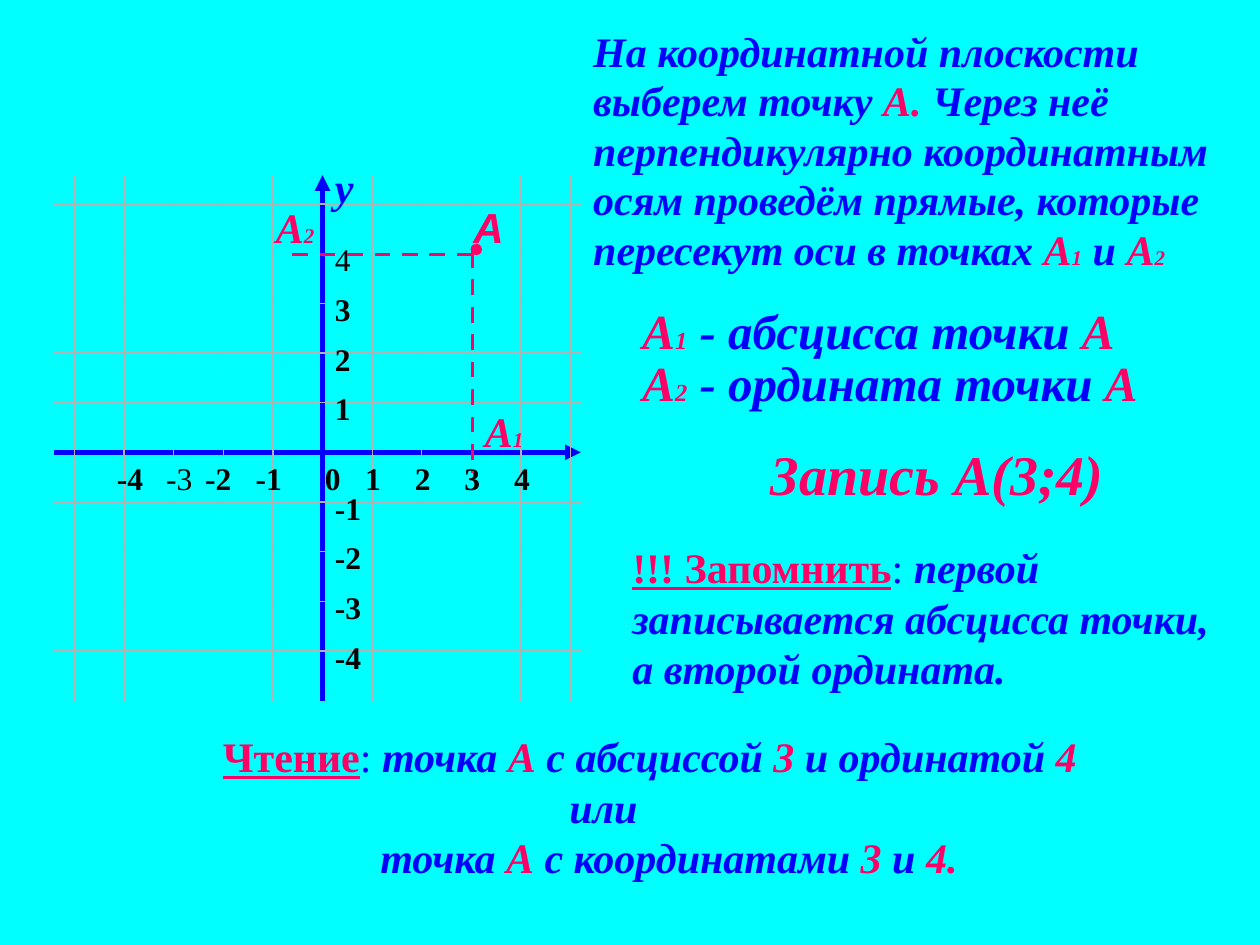
"""Build the slide that explains the coordinates of a point on a plane."""
import pptx
import pptx.dml.color
import pptx.enum.dml
import pptx.enum.shapes
import pptx.enum.text
import pptx.oxml.xmlchemy
import pptx.util

Inches = pptx.util.Inches
Pt = pptx.util.Pt

COLORS = {"back": "00FFFF", "blue": "0000FF", "pink": "FF0066", "black": "000000", "grid": "B2B2B2"}
STEP = 1.97 / 5
ORIGIN_X, ORIGIN_Y = 2.56, 3.59
LEFT, RIGHT, TOP, BOTTOM = 0.43, 4.61, 1.39, 5.56


class Board:
    """Holds the style and the current slide."""

    def __init__(self, page, font="Times New Roman"):
        self.page = page
        self.font = font
        page.background.fill.solid()
        page.background.fill.fore_color.rgb = self.color("back")

    def color(self, name):
        return pptx.dml.color.RGBColor.from_string(COLORS[name])

    def line(self, start, end, color, width, dashed=False, arrow=False):
        kind = pptx.enum.shapes.MSO_CONNECTOR.STRAIGHT
        points = [Inches(value) for value in (*start, *end)]
        connector = self.page.shapes.add_connector(kind, *points)
        connector.line.color.rgb = self.color(color)
        connector.line.width = Pt(width)
        if dashed:
            connector.line.dash_style = pptx.enum.dml.MSO_LINE.DASH
        properties = connector._element.spPr
        if arrow:
            tail = pptx.oxml.xmlchemy.OxmlElement("a:tailEnd")
            tail.set("type", "triangle")
            properties.get_or_add_ln().append(tail)
        properties.append(pptx.oxml.xmlchemy.OxmlElement("a:effectLst"))

    def dot(self, left, top, size, color):
        kind = pptx.enum.shapes.MSO_SHAPE.OVAL
        lengths = [Inches(value) for value in (left, top, size, size)]
        dot = self.page.shapes.add_shape(kind, *lengths)
        dot.shadow.inherit = False
        dot.fill.solid()
        dot.fill.fore_color.rgb = self.color(color)
        dot.line.color.rgb = self.color(color)
        dot.line.width = Pt(0.75)

    def text(self, place, paragraphs, size=24, wrap=True, gap=None, indents=(), font=None):
        box = self.page.shapes.add_textbox(*[Inches(value) for value in place])
        frame = box.text_frame
        frame.word_wrap = wrap
        frame.auto_size = pptx.enum.text.MSO_AUTO_SIZE.SHAPE_TO_FIT_TEXT
        for index, spans in enumerate(paragraphs):
            para = frame.paragraphs[0] if index == 0 else frame.add_paragraph()
            if gap:
                para.line_spacing = Pt(16)
                para.space_before = Pt(gap if index else 0)
            if indents:
                para._p.get_or_add_pPr().set("marL", str(Inches(indents[index])))
            for words, color, *marks in spans:
                span = para.add_run()
                span.text = words
                span.font.name = font or self.font
                span.font.size = Pt(size / 2 if "small" in marks else size)
                span.font.bold = "plain" not in marks
                span.font.italic = not {"plain", "upright"} & set(marks)
                span.font.underline = "under" in marks
                span.font.color.rgb = self.color(color)

    def number(self, value, left, top, plain=False):
        width = 0.33 if value >= 0 else 0.41
        mark = "plain" if plain else "upright"
        self.text((left, top, width, 0.4), [[(str(value), "black", mark)]], size=18, wrap=False)


def draw_plane(board):
    board.line((LEFT, ORIGIN_Y), (RIGHT, ORIGIN_Y), "blue", 3, arrow=True)
    board.line((ORIGIN_X, BOTTOM), (ORIGIN_X, TOP), "blue", 3, arrow=True)
    for unit in range(-5, 6):
        x, y = ORIGIN_X + unit * STEP, ORIGIN_Y - unit * STEP
        if unit not in (0, -5):
            board.line((LEFT, y), (RIGHT, y), "grid", 0.75)
        if unit:
            board.line((x, BOTTOM), (x, TOP), "grid", 0.75)

    board.text((ORIGIN_X, 1.23, 0.55, 0.5), [[("y", "blue")]])
    board.number(0, 2.48, ORIGIN_Y)
    for unit, negative_left in enumerate((1.93, 1.53, 1.22, 0.83), start=1):
        shift = (unit - 1) * STEP
        board.number(unit, 2.8 + shift, ORIGIN_Y)
        board.number(-unit, negative_left, ORIGIN_Y, plain=unit == 3)
        board.number(unit, ORIGIN_X, 3.04 - shift, plain=unit == 4)
        board.number(-unit, ORIGIN_X, 3.83 + shift)


def draw_point(board):
    board.line((3.75, 2), (3.75, 3.75), "pink", 2.25, dashed=True)
    board.line((2.32, 2.02), (3.82, 2.02), "pink", 2.25, dashed=True)
    for index, left, top in (("1", 3.75, 3.17), ("2", 2.09, 1.55)):
        label = [("А", "pink"), (index, "pink", "small")]
        board.text((left, top, 0.51, 0.5), [label], wrap=False)
    board.dot(3.74, 1.94, 0.08, "pink")
    board.text((3.66, 1.55, 0.44, 0.5), [[("А", "pink")]], wrap=False, font="Arial")


def write_explanation(board):
    board.text((4.61, 0.33, 5.14, 2.01), [
        [("На координатной плоскости", "blue")],
        [("выберем точку ", "blue"), ("А. ", "pink"), ("Через неё", "blue")],
        [("перпендикулярно координатным", "blue")],
        [("осям проведём прямые, которые", "blue")],
        [("пересекут оси в точках ", "blue"), ("А", "pink"), ("1", "pink", "small"),
         (" и ", "blue"), ("А", "pink"), ("2", "pink", "small")],
    ], gap=12.3)
    names = (("1", "абсцисса"), ("2", "ордината"))
    board.text((5, 2.58, 4.69, 0.79), [
        [("А", "pink"), (index, "pink", "small"), (f" - {name} точки ", "blue"), ("А", "pink")]
        for index, name in names
    ], size=28, gap=13.7)
    board.text((6.02, 3.44, 2.86, 0.64), [[("Запись А(3;4)", "pink")]], size=32, wrap=False)
    board.text((4.92, 4.25, 4.83, 1.3), [
        [("!!! Запомнить", "pink", "upright", "under"), (": ", "blue", "plain"),
         ("первой записывается абсцисса точки,", "blue")],
        [("а второй ордината.", "blue")],
    ])
    board.text((1.67, 5.75, 7.02, 1.3), [
        [("Чтение", "pink", "upright", "under"), (": ", "blue", "plain"), ("точка ", "blue"),
         ("А ", "pink"), ("с абсциссой", "blue"), (" 3", "pink"), (" и ординатой ", "blue"),
         ("4", "pink")],
        [("или", "blue")],
        [("точка ", "blue"), ("А ", "pink"), ("с координатами ", "blue"), ("3", "pink"),
         (" и ", "blue"), ("4.", "pink")],
    ], indents=(0, 2.75, 1.25))


def main():
    deck = pptx.Presentation()
    deck.slide_width, deck.slide_height = Inches(10), Inches(7.5)
    board = Board(deck.slides.add_slide(deck.slide_layouts[6]))
    draw_plane(board)
    write_explanation(board)
    draw_point(board)
    deck.save("out.pptx")


if __name__ == "__main__":
    main()
